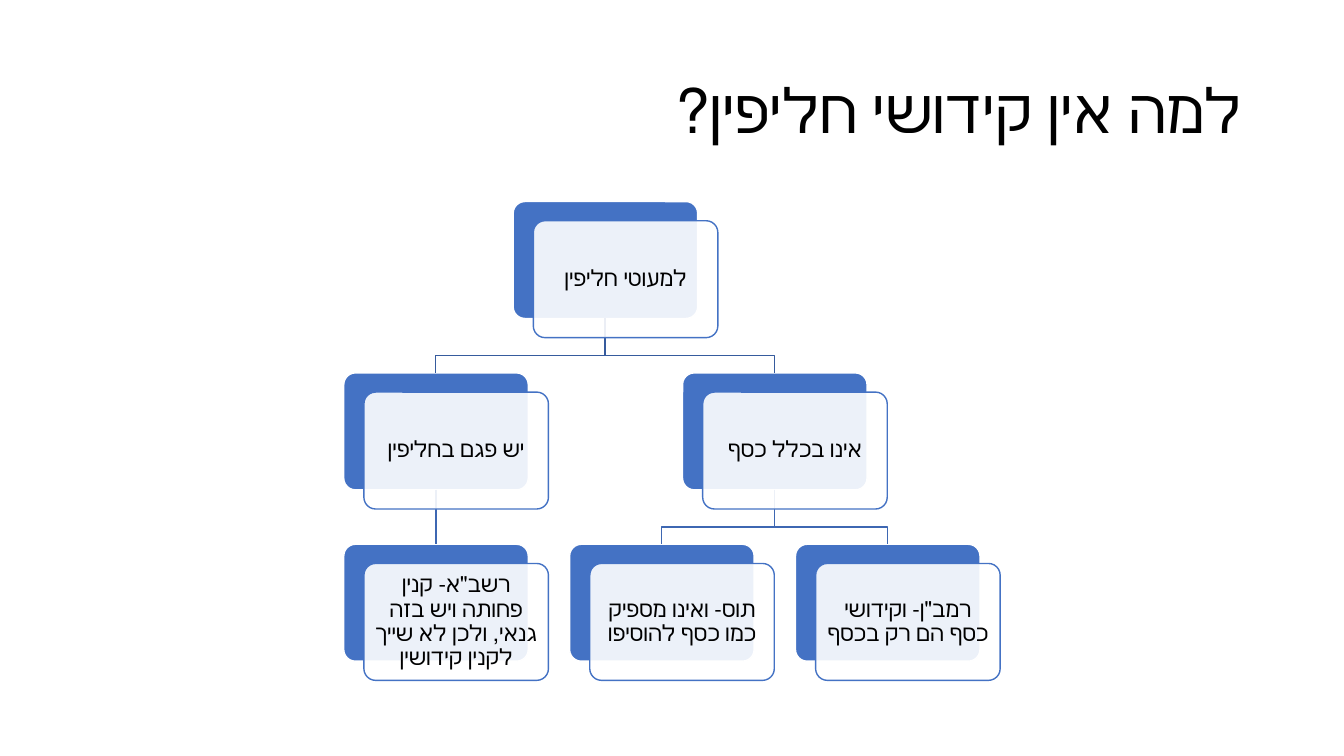
from lxml import etree
from pptx import Presentation
from pptx.dml.color import RGBColor
from pptx.enum.shapes import MSO_CONNECTOR, MSO_SHAPE
from pptx.enum.text import MSO_ANCHOR, PP_ALIGN
from pptx.oxml.ns import qn
from pptx.util import Pt

EMU_PER_PX = 9144
STRAIGHT = MSO_CONNECTOR.STRAIGHT
ROUNDED = MSO_SHAPE.ROUNDED_RECTANGLE
MIDDLE = MSO_ANCHOR.MIDDLE
CENTER = PP_ALIGN.CENTER
RIGHT = PP_ALIGN.RIGHT
BOTTOM_SITE, TOP_SITE = 2, 0

FONT = "Calibri"
BLUE, WHITE, BLACK = "4472C4", "FFFFFF", "000000"
LEVEL_LINES = ["365B9D", "3E67B2"]

CARD_W, CARD_H = 183, 116
FRONT_DX, FRONT_DY = 20, 19
LEFT, TOP = 341, 200
COLUMN_STEP, ROW_STEP = 224, 170
BEND = 37

TREE = ("למעוטי חליפין", [
    ("יש פגם בחליפין", [
        ("רשב\"א- קנין פחותה ויש בזה גנאי, ולכן לא שייך לקנין קידושין", []),
    ]),
    ("אינו בכלל כסף", [
        ("תוס- ואינו מספיק כמו כסף להוסיפו", []),
        ("רמב\"ן- וקידושי כסף הם רק בכסף", []),
    ]),
])


def px(length):
    return int(length * EMU_PER_PX)


def color(hex_string):
    return RGBColor.from_string(hex_string)


def place_tree(node, cards, links, leaf_lefts, level=0):
    text, children = node
    child_cards = [place_tree(child, cards, links, leaf_lefts, level + 1)
                   for child in children]
    if child_cards:
        left = (child_cards[0]["left"] + child_cards[-1]["left"]) // 2
    else:
        left = next(leaf_lefts)
    card = {"text": text, "left": left, "top": TOP + level * ROW_STEP}
    cards.append(card)
    links.extend((card, child, LEVEL_LINES[level]) for child in child_cards)
    return card


def write(paragraph, text, size):
    run = paragraph.add_run()
    run.text = text
    run.font.size = Pt(size)
    run.font.name = FONT
    run.font.color.rgb = color(BLACK)
    run.font._element.set("lang", "he-IL")
    paragraph.line_spacing = 0.9


def add_title(slide, text):
    title = slide.shapes.title
    title.left, title.top = px(92), px(40)
    title.width, title.height = px(1150), px(145)
    title.text_frame.vertical_anchor = MIDDLE
    paragraph = title.text_frame.paragraphs[0]
    paragraph.alignment = RIGHT
    paragraph._p.get_or_add_pPr().set("rtl", "1")
    write(paragraph, text, 44)


def add_plate(slide, left, top, fill, line):
    plate = slide.shapes.add_shape(ROUNDED, px(left), px(top), px(CARD_W), px(CARD_H))
    plate.adjustments[0] = 0.1
    plate.shadow.inherit = False
    plate.fill.solid()
    plate.fill.fore_color.rgb = color(fill)
    plate.line.color.rgb = color(line)
    plate.line.width = Pt(1)
    return plate


def add_front(slide, card):
    front = add_plate(slide, card["left"] + FRONT_DX, card["top"] + FRONT_DY, WHITE, BLUE)
    fill_color = front._element.spPr.find(qn("a:solidFill"))[0]
    etree.SubElement(fill_color, qn("a:alpha")).set("val", "90000")
    frame = front.text_frame
    frame.word_wrap = True
    frame.vertical_anchor = MIDDLE
    frame.margin_left = frame.margin_right = px(7)
    frame.margin_top = frame.margin_bottom = px(7)
    paragraph = frame.paragraphs[0]
    paragraph.alignment = CENTER
    paragraph.space_after = Pt(5.6)
    write(paragraph, card["text"], 16)


def add_link(slide, parent, child, line):
    start_x, end_x = parent["left"] + CARD_W // 2, child["left"] + CARD_W // 2
    start_y, end_y = parent["top"] + CARD_H, child["top"]
    if start_x == end_x:
        link = slide.shapes.add_connector(
            STRAIGHT, px(start_x), px(start_y), px(end_x), px(end_y))
        link.begin_connect(parent["back"], BOTTOM_SITE)
        link.end_connect(child["back"], TOP_SITE)
        etree.SubElement(link._element.spPr, qn("a:effectLst"))
    else:
        bend_y = start_y + BEND
        outline = slide.shapes.build_freeform(start_x, start_y, scale=EMU_PER_PX)
        outline.add_line_segments(
            [(start_x, bend_y), (end_x, bend_y), (end_x, end_y)], close=False)
        link = outline.convert_to_shape()
        link.fill.background()
        link.shadow.inherit = False
    link.line.color.rgb = color(line)
    link.line.width = Pt(1)


def main():
    presentation = Presentation()
    presentation.slide_width, presentation.slide_height = px(1333), px(750)
    slide = presentation.slides.add_slide(presentation.slide_layouts[5])
    add_title(slide, "למה אין קידושי חליפין?")

    cards, links = [], []
    leaf_lefts = iter(range(LEFT, LEFT + 3 * COLUMN_STEP, COLUMN_STEP))
    place_tree(TREE, cards, links, leaf_lefts)
    for card in cards:
        card["back"] = add_plate(slide, card["left"], card["top"], BLUE, WHITE)
    for parent, child, line in links:
        add_link(slide, parent, child, line)
    for card in cards:
        add_front(slide, card)
    presentation.save("out.pptx")


if __name__ == "__main__":
    main()
